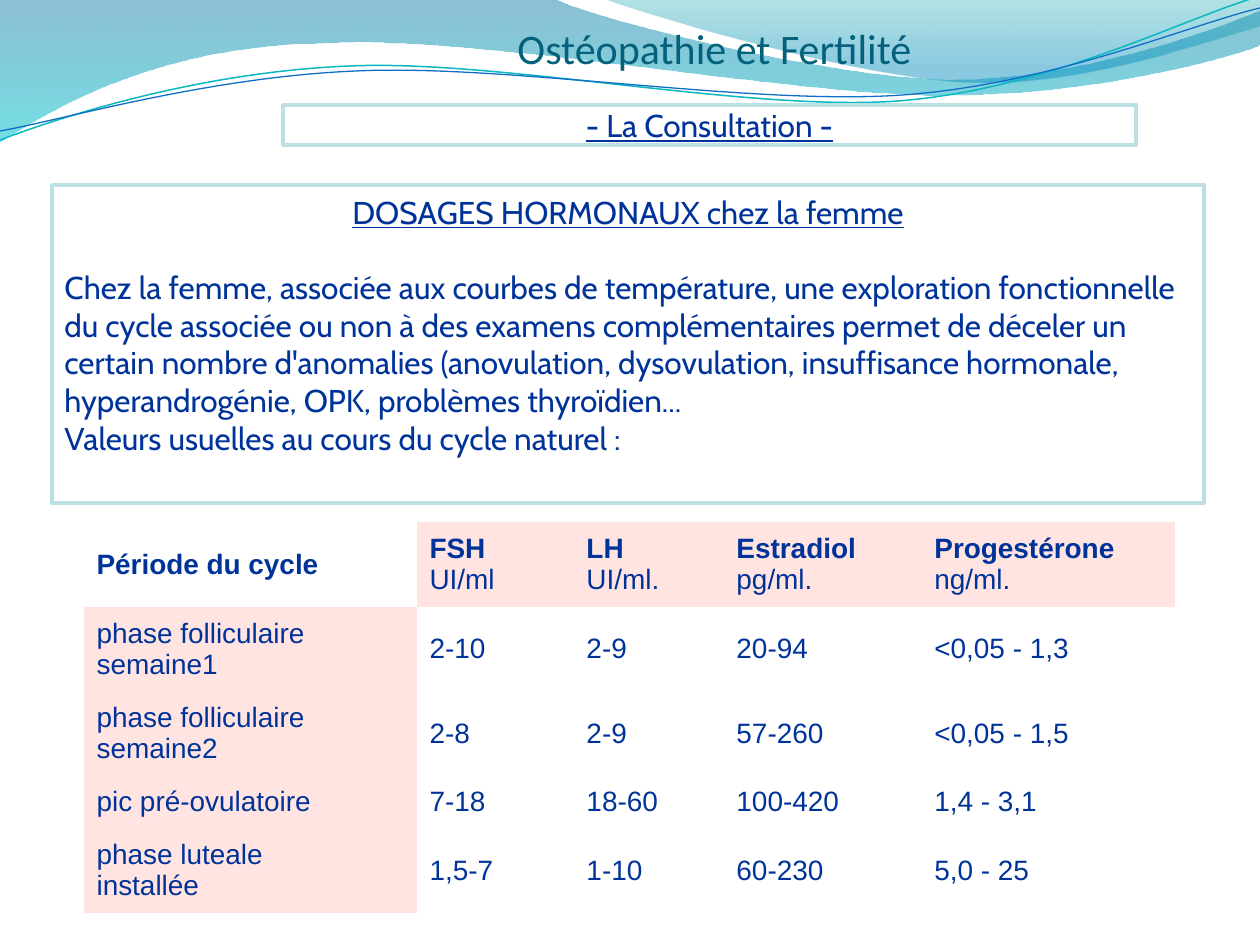
"""Build the slide on hormone levels over the natural cycle."""
import pptx
import pptx.util
import pptx.dml.color
import pptx.enum.shapes
import pptx.enum.text
import pptx.oxml.ns
import lxml.etree

THEME = {
    "title": "04617B", "ink": "003399", "edge": "BBE0E3", "paper": "FFFFFF",
    "tint": "FFE4E1", "head": 24, "body": 18, "cell": 16, "border": 2,
    "gap": 21.2, "sans": "Cabin", "top": "Calibri", "grid": "Arial",
}
PX = 914400 / 126
PLAIN = "{2D5ABB26-0587-4C30-8999-92F81FD0307C}"

TITLE = "Ostéopathie et Fertilité"
PART = "- La Consultation -"
BODY = [
    "DOSAGES HORMONAUX chez la femme",
    "Chez la femme, associée aux courbes de température, une exploration "
    "fonctionnelle du cycle associée ou non à des examens complémentaires "
    "permet de déceler un certain nombre d'anomalies (anovulation, "
    "dysovulation, insuffisance hormonale, hyperandrogénie, OPK, problèmes "
    "thyroïdien...",
    "Valeurs usuelles au cours du cycle naturel :",
]
COLS = [333, 157, 150, 198, 253]
ROWS = [85, 84, 85, 52, 85]
DATA = [
    ["Période du cycle", "FSH\nUI/ml", "LH\nUI/ml.", "Estradiol\npg/ml.",
     "Progestérone\nng/ml."],
    ["phase folliculaire\nsemaine1", "2-10", "2-9", "20-94", "<0,05 - 1,3"],
    ["phase folliculaire\nsemaine2", "2-8", "2-9", "57-260", "<0,05 - 1,5"],
    ["pic pré-ovulatoire", "7-18", "18-60", "100-420", "1,4 - 3,1"],
    ["phase luteale\ninstallée", "1,5-7", "1-10", "60-230", "5,0 - 25"],
]
WAVES = [
    ([(0, 0), (554, -1), (600, 21, 837, 79, 955, 79),
      (1075, 79, 1207, 33, 1260, 11), (1261, 45),
      (1239, 55, 1096, 96, 940, 95), (784, 95, 481, 35, 324, 43),
      (163, 45, 58, 105, -1, 142)],
     [(0, "0074A1", 45), (1, "00C6CF", 55)]),
    ([(604, -1), (641, 14, 859, 78, 969, 82),
      (1079, 87, 1211, 40, 1260, 26), (1260, 0)],
     [(0, "00A1A9", 30), (0.8, "008BBF", 45)]),
]
CURVES = [
    ([(0, 140), (60, 117, 199, 72, 349, 66), (498, 59, 747, 112, 898, 101),
      (1050, 89, 1182, 19, 1257, -3)], "0AB8BF", 0.85),
    ([(0, 131), (59, 121, 207, 77, 357, 71), (508, 64, 752, 106, 903, 95),
      (1053, 84, 1186, 26, 1260, 8)], "0F6FC6", 0.75),
]


def emu(*px):
    return [pptx.util.Emu(round(v * PX)) for v in px]


def rgb(code):
    return pptx.dml.color.RGBColor.from_string(code)


def bend(shape, path):
    qn = pptx.oxml.ns.qn
    lines = list(shape.element.spPr.iter(qn("a:lnTo")))
    for line, seg in zip(lines, path[1:]):
        if len(seg) == 2:
            continue
        line.tag = qn("a:cubicBezTo")
        for point in list(line):
            line.remove(point)
        spots = emu(*seg)
        for x, y in zip(spots[::2], spots[1::2]):
            point = lxml.etree.SubElement(line, qn("a:pt"))
            point.set("x", str(x - shape.left))
            point.set("y", str(y - shape.top))


def draw(slide, path, close):
    pts = [emu(*seg[-2:]) for seg in path]
    pen = slide.shapes.build_freeform(*pts[0])
    pen.add_line_segments(pts[1:], close=close)
    shape = pen.convert_to_shape()
    shape.shadow.inherit = False
    bend(shape, path)
    return shape


def wave(slide, path, stops):
    shape = draw(slide, path, True)
    shape.line.fill.background()
    shape.fill.gradient()
    shape.fill.gradient_angle = 270
    for stop, (pos, code, _) in zip(shape.fill.gradient_stops, stops):
        stop.position = pos
        stop.color.rgb = rgb(code)
    qn = pptx.oxml.ns.qn
    tags = shape.element.spPr.iter(qn("a:srgbClr"))
    for tag, (_, _, part) in zip(list(tags), stops):
        alpha = lxml.etree.SubElement(tag, qn("a:alpha"))
        alpha.set("val", str(part * 1000))


def curve(slide, path, code, width):
    shape = draw(slide, path, False)
    shape.fill.background()
    shape.line.color.rgb = rgb(code)
    shape.line.width = pptx.util.Pt(width)


def style(para, face, size, code, under=None, mid=False):
    font = para.font
    font.name, font.size = face, pptx.util.Pt(size)
    font.color.rgb = rgb(code)
    font.underline = under
    align = pptx.enum.text.PP_ALIGN
    para.alignment = align.CENTER if mid else align.LEFT


def panel(slide, box, lines, anchor):
    kind = pptx.enum.shapes.MSO_SHAPE.RECTANGLE
    shape = slide.shapes.add_shape(kind, *emu(*box))
    shape.shadow.inherit = False
    shape.fill.solid()
    shape.fill.fore_color.rgb = rgb(THEME["paper"])
    shape.line.color.rgb = rgb(THEME["edge"])
    shape.line.width = pptx.util.Pt(THEME["border"])
    frame = shape.text_frame
    frame.word_wrap = True
    frame.vertical_anchor = anchor
    frame.text = "\n".join(lines)
    for i, para in enumerate(frame.paragraphs):
        style(para, THEME["sans"], THEME["body"], THEME["ink"], i == 0, i == 0)
        if i == 1:
            para.space_before = pptx.util.Pt(THEME["gap"])
    return frame


def table(slide, left, top):
    box = emu(left, top, sum(COLS), sum(ROWS))
    grid = slide.shapes.add_table(len(ROWS), len(COLS), *box).table
    grid.first_row = grid.horz_banding = False
    tag = pptx.oxml.ns.qn("a:tableStyleId")
    next(grid._tbl.iter(tag)).text = PLAIN
    for col, width in zip(grid.columns, emu(*COLS)):
        col.width = width
    for row, height in zip(grid.rows, emu(*ROWS)):
        row.height = height
    for r, texts in enumerate(DATA):
        for c, text in enumerate(texts):
            cell = grid.cell(r, c)
            cell.vertical_anchor = pptx.enum.text.MSO_ANCHOR.MIDDLE
            if (r == 0) != (c == 0):
                cell.fill.solid()
                cell.fill.fore_color.rgb = rgb(THEME["tint"])
            else:
                cell.fill.background()
            para = cell.text_frame.paragraphs[0]
            para.text = text.replace("\n", "\v")
            style(para, THEME["grid"], THEME["cell"], THEME["ink"])
            if r == 0:
                para.runs[0].font.bold = True


def main():
    deck = pptx.Presentation()
    deck.slide_width, deck.slide_height = emu(1260, 945)
    slide = deck.slides.add_slide(deck.slide_layouts[6])
    anchor = pptx.enum.text.MSO_ANCHOR
    for item in WAVES:
        wave(slide, *item)
    for item in CURVES:
        curve(slide, *item)
    frame = slide.shapes.add_textbox(*emu(333, 16, 763, 59)).text_frame
    frame.word_wrap = True
    frame.text = TITLE
    style(frame.paragraphs[0], THEME["top"], THEME["head"], THEME["title"],
          mid=True)
    body = panel(slide, (52, 185, 1152, 318), BODY, anchor.TOP)
    body.margin_top = emu(8)[0]
    table(slide, 84, 522)
    panel(slide, (283, 105, 853, 40), [PART], anchor.MIDDLE)
    deck.save("out.pptx")


if __name__ == "__main__":
    main()
